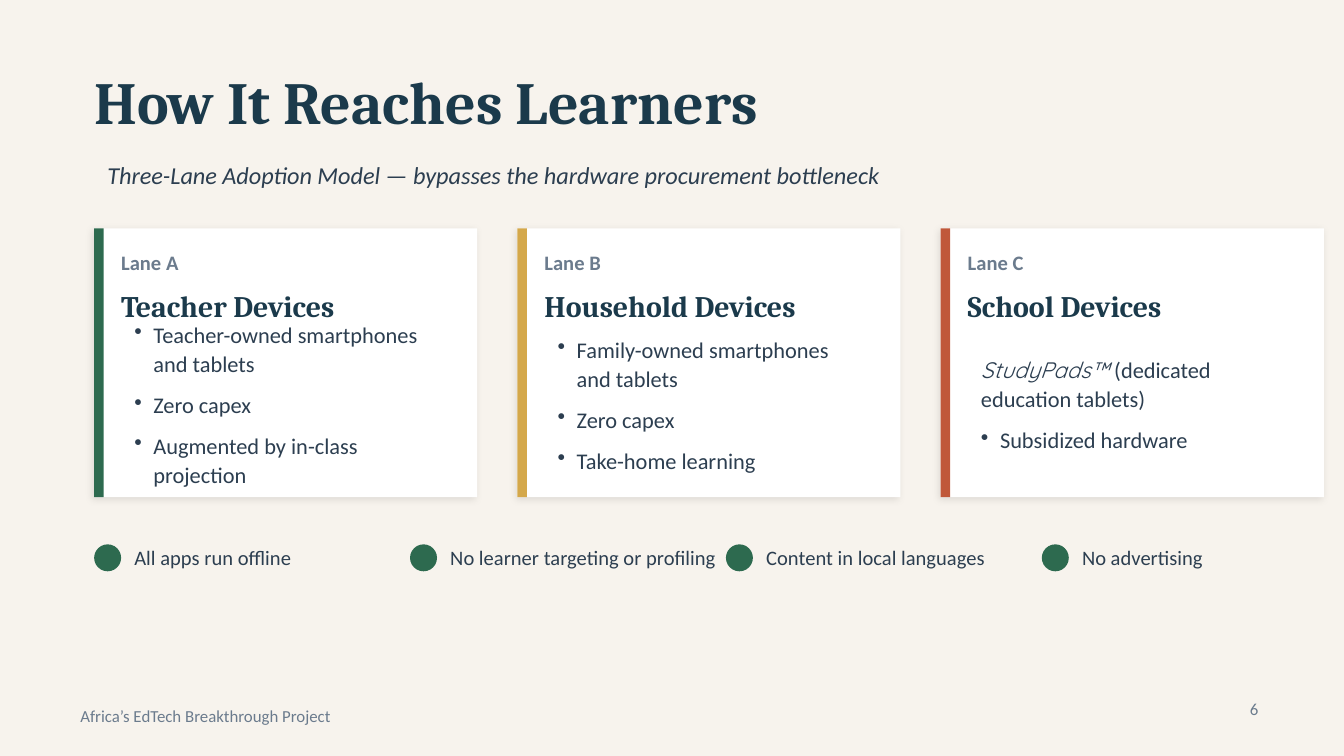
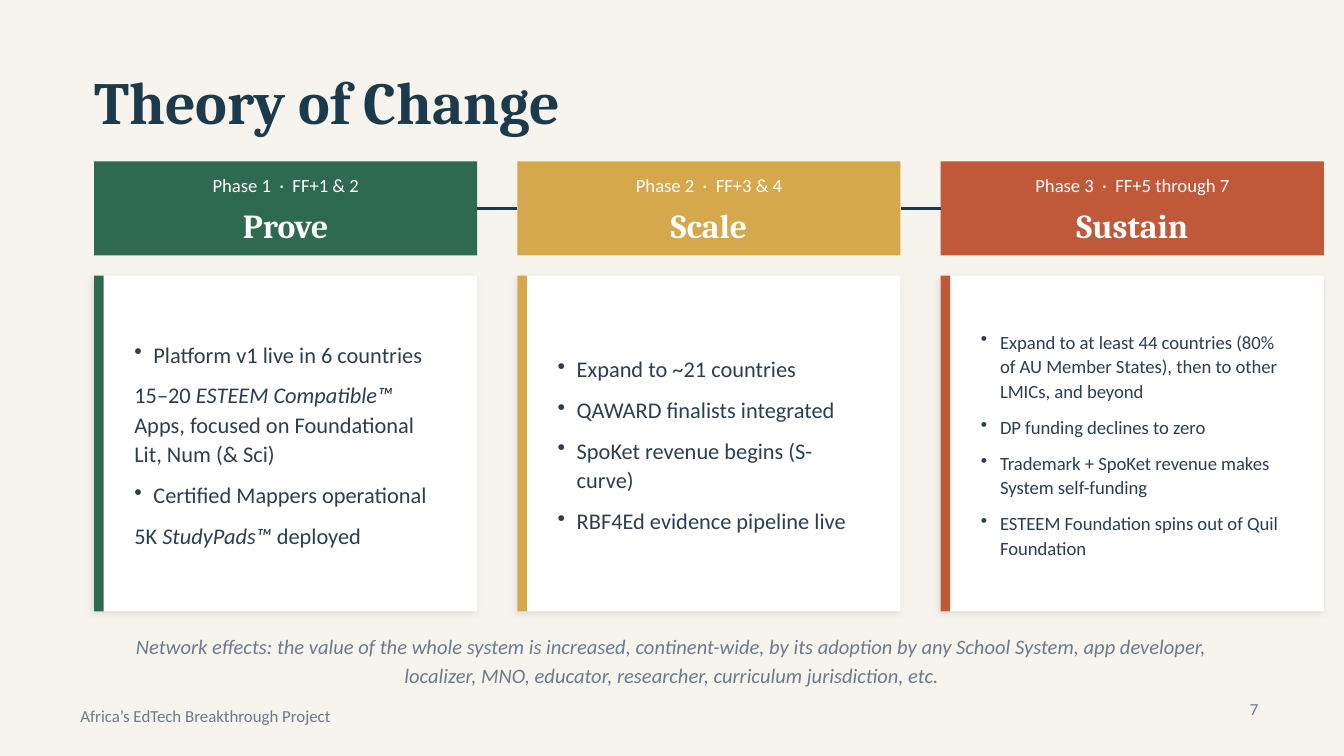
from lxml import etree
from pptx import Presentation
from pptx import util as u
from pptx.dml.color import RGBColor
from pptx.enum import shapes, text
from pptx.oxml.ns import qn

COLORS = {
    "paper": "F7F3ED", "white": "FFFFFF", "navy": "1B3A4B", "ink": "2C3E50",
    "muted": "6B7B8D", "green": "2D6A4F", "gold": "D4A84B", "rust": "C0583A",
    "shadow": "000000",
}
LANE_COLORS = ("green", "gold", "rust")
HEAD, BODY = "Cambria", "Calibri"

# Lengths in centimetres
LEFT, FULL_W = 1.78, 21.84
CARD_W, CARD_PITCH = 7.24, 8
STRIPE_W = 0.18
CARD_PAD, CARD_TEXT_W = 0.51, 6.22
DOT, DOT_PITCH = 0.51, 5.97
BULLET_INDENT = 0.36


def rgb(name):
    return RGBColor.from_string(COLORS[name])


def add_sub(parent, tag, **attrs):
    return etree.SubElement(parent, qn(tag), {k: str(v) for k, v in attrs.items()})


def card_left(i):
    return LEFT + i * CARD_PITCH


class Deck:
    def __init__(self):
        self.prs = Presentation()
        self.prs.slide_width, self.prs.slide_height = u.Cm(25.4), u.Cm(14.29)
        self.s = None

    def slide(self, title, number):
        """Start a slide with its background, title, footer and page number."""
        self.s = self.prs.slides.add_slide(self.prs.slide_layouts[6])
        fill = self.s.background.fill
        fill.solid()
        fill.fore_color.rgb = rgb("paper")
        self.label(title, LEFT, 1.02, FULL_W, 1.78, 32, "navy", font=HEAD, bold=True)
        self.label("Africa’s EdTech Breakthrough Project", 1.27, 13.08, 22.86, 0.89,
                   9, "muted", inset=True)
        self.label(str(number), 23.37, 13.08, 1.27, 0.89, 9, "muted",
                   inset=True, middle=False)

    def shape(self, x, y, w, h, color, kind=shapes.MSO_SHAPE.RECTANGLE):
        sp = self.s.shapes.add_shape(kind, u.Cm(x), u.Cm(y), u.Cm(w), u.Cm(h))
        sp.shadow.inherit = False
        sp.fill.solid()
        sp.fill.fore_color.rgb = rgb(color)
        sp.line.fill.background()
        return sp

    def card(self, x, y, h, color):
        """White panel with a soft shadow and a coloured stripe on its left."""
        sp = self.shape(x, y, CARD_W, h, "white")
        effects = sp._element.spPr.find(qn("a:effectLst"))
        shadow = add_sub(effects, "a:outerShdw", blurRad=u.Pt(4), dist=u.Pt(1.5),
                         dir=135 * 60000, algn="bl", rotWithShape=0)
        clr = add_sub(shadow, "a:srgbClr", val=COLORS["shadow"])
        add_sub(clr, "a:alpha", val=10000)
        self.shape(x, y, STRIPE_W, h, color)

    def frame(self, x, y, w, h, inset=True, middle=True):
        tf = self.s.shapes.add_textbox(u.Cm(x), u.Cm(y), u.Cm(w), u.Cm(h)).text_frame
        tf.word_wrap = True
        tf.vertical_anchor = text.MSO_ANCHOR.MIDDLE if middle else text.MSO_ANCHOR.TOP
        if not inset:
            tf.margin_left = tf.margin_right = tf.margin_top = tf.margin_bottom = 0
        return tf

    def run(self, p, words, size, color, font=BODY, bold=False, italic=False):
        r = p.add_run()
        r.text = words
        r.font.size, r.font.name = u.Pt(size), font
        r.font.bold, r.font.italic = bold, italic
        r.font.color.rgb = rgb(color)

    def label(self, words, x, y, w, h, size, color, inset=False, middle=True,
              center=False, spacing=None, **style):
        p = self.frame(x, y, w, h, inset, middle).paragraphs[0]
        p.alignment = text.PP_ALIGN.CENTER if center else text.PP_ALIGN.LEFT
        if spacing:
            p.line_spacing = spacing
        self.run(p, words, size, color, **style)

    def bullets(self, items, x, y, w, h, size=12):
        """A string is a bulleted line; a tuple of (words, style) runs is a plain one."""
        tf = self.frame(x, y, w, h)
        for i, item in enumerate(items):
            p = tf.add_paragraph() if i else tf.paragraphs[0]
            p.line_spacing = 1.1
            p.space_after = u.Pt(6 if i < len(items) - 1 else 0)
            if isinstance(item, str):
                pPr = p._p.get_or_add_pPr()
                pPr.set("marL", str(u.Cm(BULLET_INDENT)))
                pPr.set("indent", str(-u.Cm(BULLET_INDENT)))
                add_sub(pPr, "a:buChar", char="•")
                item = ((item, {}),)
            for words, style in item:
                self.run(p, words, size, "ink", **style)

    def dot(self, words, x, y):
        self.shape(x, y, DOT, DOT, "green", shapes.MSO_SHAPE.OVAL)
        self.label(words, x + 0.76, y - 0.13, 5.08, 0.76, 11, "ink")

    def link(self, x1, x2, y):
        cn = self.s.shapes.add_connector(shapes.MSO_CONNECTOR.STRAIGHT,
                                         u.Cm(x1), u.Cm(y), u.Cm(x2), u.Cm(y))
        cn.line.color.rgb = rgb("navy")
        cn.line.width = u.Pt(2)
        add_sub(cn._element.spPr, "a:effectLst")


ITALIC = {"italic": True}
LANES = (
    ("Lane A", "Teacher Devices",
     ("Teacher-owned smartphones and tablets", "Zero capex",
      "Augmented by in-class projection")),
    ("Lane B", "Household Devices",
     ("Family-owned smartphones and tablets", "Zero capex", "Take-home learning")),
    ("Lane C", "School Devices",
     ((("StudyPads™", {"font": "Quicksand", "italic": True}),
       (" (dedicated education tablets)", {})),
      "Subsidized hardware")),
)
PROMISES = ("All apps run offline", "No learner targeting or profiling",
            "Content in local languages", "No advertising")
PHASES = (
    ("Phase 1  ·  FF+1 & 2", "Prove", 12,
     ("Platform v1 live in 6 countries",
      (("15–20 ", {}), ("ESTEEM Compatible™", ITALIC),
       (" Apps, focused on Foundational Lit, Num (& Sci)", {})),
      "Certified Mappers operational",
      (("5K ", {}), ("StudyPads™", ITALIC), (" deployed", {})))),
    ("Phase 2  ·  FF+3 & 4", "Scale", 12,
     ("Expand to ~21 countries", "QAWARD finalists integrated",
      "SpoKet revenue begins (S-curve)", "RBF4Ed evidence pipeline live")),
    ("Phase 3  ·  FF+5 through 7", "Sustain", 10,
     ("Expand to at least 44 countries (80% of AU Member States), "
      "then to other LMICs, and beyond",
      "DP funding declines to zero",
      "Trademark + SpoKet revenue makes System self-funding",
      "ESTEEM Foundation spins out of Quil Foundation")),
)


def reach_slide(d):
    d.slide("How It Reaches Learners", 6)
    d.label("Three-Lane Adoption Model — bypasses the hardware procurement bottleneck",
            LEFT, 2.79, FULL_W, 1.02, 13, "ink", inset=True, italic=True)
    for i, (lane, name, items) in enumerate(LANES):
        x = card_left(i)
        d.card(x, 4.32, 5.08, LANE_COLORS[i])
        x += CARD_PAD
        d.label(lane, x, 4.57, CARD_TEXT_W, 0.76, 11, "muted", bold=True)
        d.label(name, x, 5.33, CARD_TEXT_W, 0.89, 16, "navy", font=HEAD, bold=True)
        d.bullets(items, x, 6.48, CARD_TEXT_W, 2.29)
    for i, promise in enumerate(PROMISES):
        d.dot(promise, LEFT + i * DOT_PITCH, 10.29)


def change_slide(d):
    d.slide("Theory of Change", 7)
    for i, (phase, name, size, items) in enumerate(PHASES):
        x = card_left(i)
        d.shape(x, 3.05, CARD_W, 1.78, LANE_COLORS[i])
        d.label(phase, x, 3.1, CARD_W, 0.81, 10, "white", center=True)
        d.label(name, x, 3.81, CARD_W, 0.89, 18, "white", center=True,
                font=HEAD, bold=True)
        d.card(x, 5.21, 6.35, LANE_COLORS[i])
        d.bullets(items, x + CARD_PAD, 5.59, CARD_TEXT_W, 5.59, size)
        if i:
            d.link(card_left(i - 1) + CARD_W, x, 3.94)
    d.label("Network effects: the value of the whole system is increased, "
            "continent-wide, by its adoption by any School System, app developer, "
            "localizer, MNO, educator, researcher, curriculum jurisdiction, etc.",
            LEFT, 11.81, FULL_W, 1.27, 11, "muted", inset=True, center=True,
            spacing=1.2, italic=True)


def main():
    d = Deck()
    reach_slide(d)
    change_slide(d)
    d.prs.save("out.pptx")


if __name__ == "__main__":
    main()
